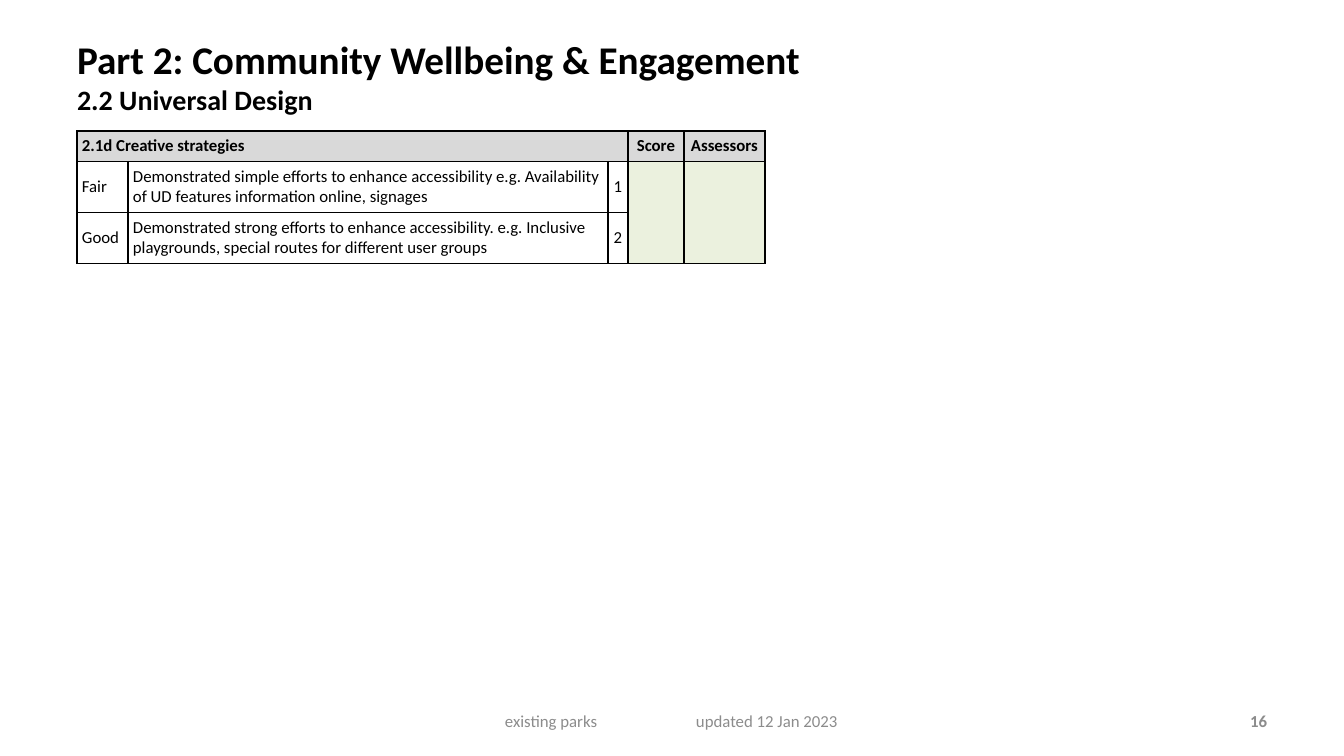
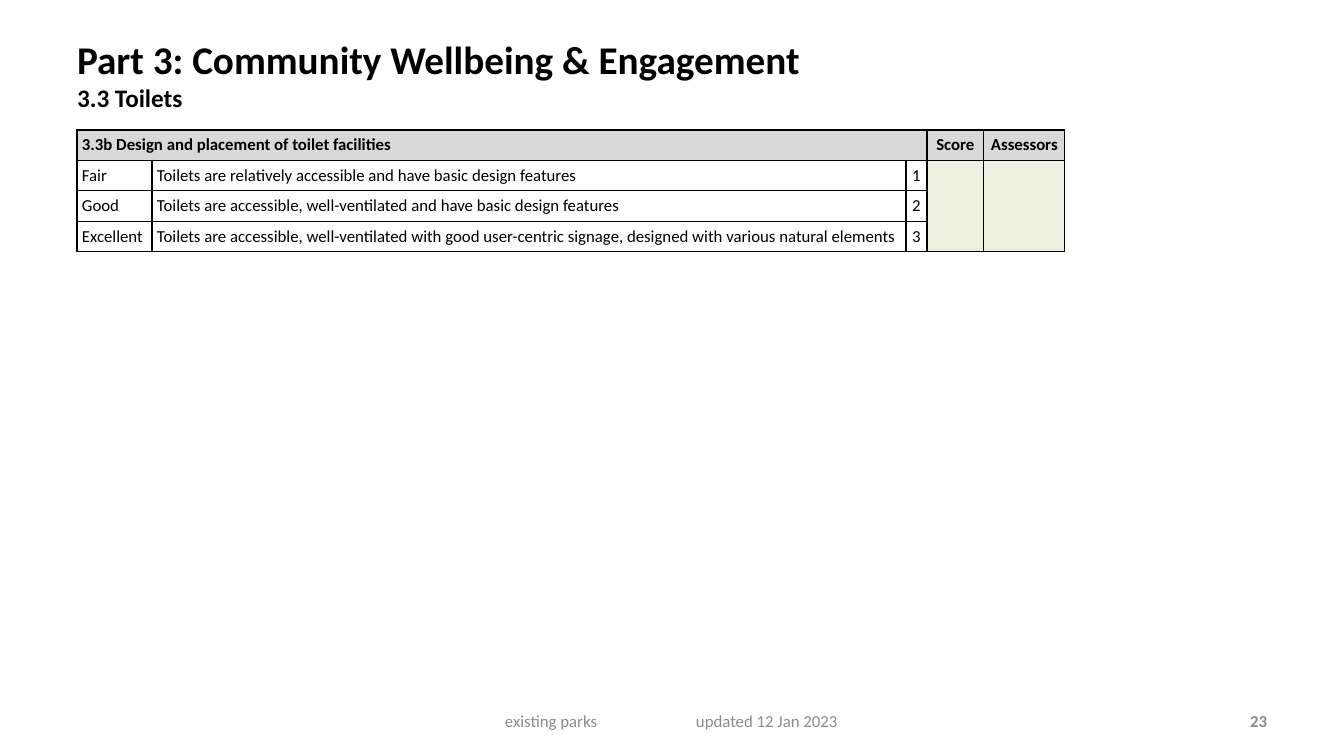
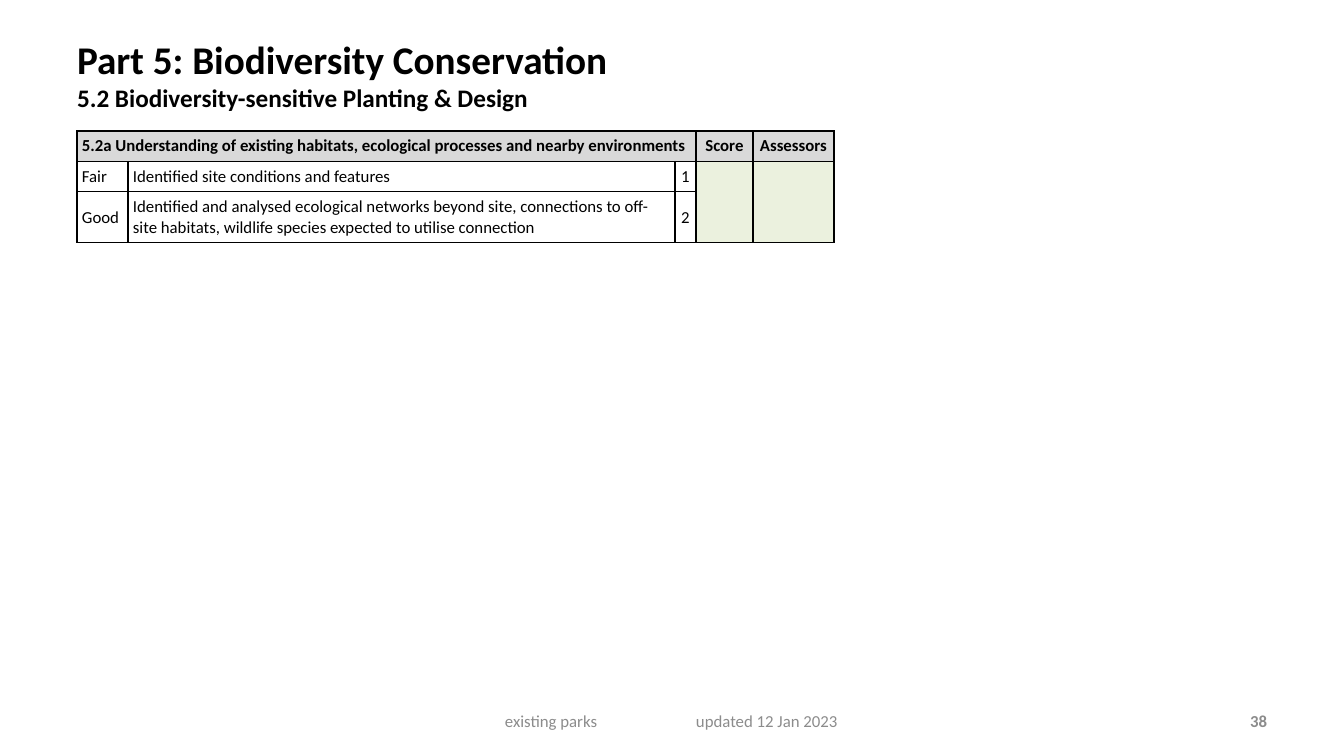
from lxml import etree
from pptx import Presentation
from pptx import util as u
from pptx.dml.color import RGBColor
from pptx.enum import text as t
from pptx.oxml import ns

# Content
FOOTER = "existing parks\tupdated 12 Jan 2023"
SLIDES = [
    dict(page=16, title="Part 2: Community Wellbeing & Engagement",
         subtitle="2.2 Universal Design", subtitle_pt=20,
         criterion="2.1d Creative strategies",
         top=131, cols=[51, 480, 20, 56, 81],
         grades=[
             ("Fair", "Demonstrated simple efforts to enhance accessibility e.g. "
                      "Availability of UD features information online, signages", 2),
             ("Good", "Demonstrated strong efforts to enhance accessibility. e.g. "
                      "Inclusive playgrounds, special routes for different user groups", 2),
         ]),
    dict(page=23, title="Part 3: Community Wellbeing & Engagement",
         subtitle="3.3 Toilets", subtitle_pt=18,
         criterion="3.3b Design and placement of toilet facilities",
         top=130, cols=[75, 754, 21, 57, 81],
         grades=[
             ("Fair", "Toilets are relatively accessible and have basic design features", 1),
             ("Good", "Toilets are accessible, well-ventilated and have basic design "
                      "features", 1),
             ("Excellent", "Toilets are accessible, well-ventilated with good user-centric "
                           "signage, designed with various natural elements", 1),
         ]),
    dict(page=38, title="Part 5: Biodiversity Conservation",
         subtitle="5.2 Biodiversity-sensitive Planting & Design", subtitle_pt=18,
         criterion="5.2a Understanding of existing habitats, ecological processes "
                   "and nearby environments",
         top=131, cols=[51, 547, 21, 57, 81],
         grades=[
             ("Fair", "Identified site conditions and features", 1),
             ("Good", "Identified and analysed ecological networks beyond site, connections "
                      "to off-site habitats, wildlife species expected to utilise "
                      "connection", 2),
         ]),
]

# Shared style
FONT = "Calibri"
BLACK = RGBColor(0x00, 0x00, 0x00)
GREY = RGBColor(0x8C, 0x8C, 0x8C)
HEADER_FILL = RGBColor(0xD9, 0xD9, 0xD9)
SCORE_FILL = RGBColor(0xEB, 0xF1, 0xDE)
BODY_PT = 12
TABLE_LEFT = 77
CELL_INSET = 5
ROW_HEIGHT = {1: 30, 2: 51}  # by number of text lines
FOOTER_TAB = 191


def px(n):
    return u.Emu(round(n * 12192000 / 1344))


def style(r, size=BODY_PT, color=BLACK, bold=False):
    r.font.name = FONT
    r.font.size = u.Pt(size)
    r.font.bold = bold
    r.font.color.rgb = color


def add_title(s, title, subtitle, subtitle_pt):
    sp = s.shapes.title
    sp.left, sp.top, sp.width, sp.height = px(67), px(30), px(1044), px(100)
    tf = sp.text_frame
    tf.auto_size = t.MSO_AUTO_SIZE.NONE
    tf.vertical_anchor = t.MSO_ANCHOR.TOP
    p = tf.paragraphs[0]
    p.text = f"{title}\v{subtitle}"
    p.alignment = t.PP_ALIGN.LEFT
    for r, size in zip(p.runs, (28, subtitle_pt)):
        style(r, size, bold=True)


def add_note(s, text, left, width, align, bold=False):
    """Grey line of text at the foot of the slide."""
    tf = s.shapes.add_textbox(px(left), px(701), px(width), px(40)).text_frame
    tf.word_wrap = True
    tf.vertical_anchor = t.MSO_ANCHOR.MIDDLE
    p = tf.paragraphs[0]
    p.text = text
    p.alignment = align
    for r in p.runs:
        style(r, color=GREY, bold=bold)
    return tf


def add_footer(s, page):
    add_note(s, str(page), 964, 313, t.PP_ALIGN.RIGHT, bold=True)
    tf = add_note(s, FOOTER, 460, 425, t.PP_ALIGN.LEFT)
    tf.margin_left = px(45)
    tabs = etree.SubElement(tf.paragraphs[0]._p.get_or_add_pPr(), ns.qn("a:tabLst"))
    etree.SubElement(tabs, ns.qn("a:tab"), pos=str(px(FOOTER_TAB)), algn="l")


def set_borders(cell):
    tcPr = cell._tc.get_or_add_tcPr()
    for i, side in enumerate(("lnL", "lnR", "lnT", "lnB")):
        ln = etree.Element(ns.qn(f"a:{side}"), w=str(u.Pt(1)))
        fill = etree.SubElement(ln, ns.qn("a:solidFill"))
        etree.SubElement(fill, ns.qn("a:srgbClr"), val=str(BLACK))
        tcPr.insert(i, ln)


def format_cell(cell, text, row, col):
    cell.margin_left = cell.margin_right = px(CELL_INSET)
    cell.margin_top = cell.margin_bottom = px(CELL_INSET)
    cell.vertical_anchor = t.MSO_ANCHOR.MIDDLE
    if row == 0 or col > 2:
        cell.fill.solid()
        cell.fill.fore_color.rgb = HEADER_FILL if row == 0 else SCORE_FILL
    else:
        cell.fill.background()
    set_borders(cell)
    p = cell.text_frame.paragraphs[0]
    p.alignment = t.PP_ALIGN.CENTER if col > 1 else t.PP_ALIGN.LEFT
    if text:
        p.text = text
        style(p.runs[0], bold=row == 0)
    else:
        etree.SubElement(p._p, ns.qn("a:endParaRPr"), sz=str(BODY_PT * 100))


def add_score_table(s, criterion, top, cols, grades):
    rows = [(criterion, "", "", "Score", "Assessors")]
    rows += [(grade, text, str(n), "", "") for n, (grade, text, _) in enumerate(grades, 1)]
    heights = [ROW_HEIGHT[lines] for lines in [1] + [g[2] for g in grades]]
    table = s.shapes.add_table(len(rows), len(cols), px(TABLE_LEFT), px(top),
                               px(sum(cols)), px(sum(heights))).table
    table.first_row = table.horz_banding = False
    for column, width in zip(table.columns, cols):
        column.width = px(width)
    for row, height in zip(table.rows, heights):
        row.height = px(height)
    for i, row in enumerate(rows):
        for j, text in enumerate(row):
            format_cell(table.cell(i, j), text, i, j)
    # The criterion spans the grade columns; the score cells span all grades
    table.cell(0, 0).merge(table.cell(0, 2))
    for j in (3, 4):
        table.cell(1, j).merge(table.cell(len(grades), j))


def main():
    prs = Presentation()
    prs.slide_width, prs.slide_height = px(1344), px(756)
    for d in SLIDES:
        s = prs.slides.add_slide(prs.slide_layouts[5])
        add_title(s, d["title"], d["subtitle"], d["subtitle_pt"])
        add_score_table(s, d["criterion"], d["top"], d["cols"], d["grades"])
        add_footer(s, d["page"])
    prs.save("out.pptx")


if __name__ == "__main__":
    main()
